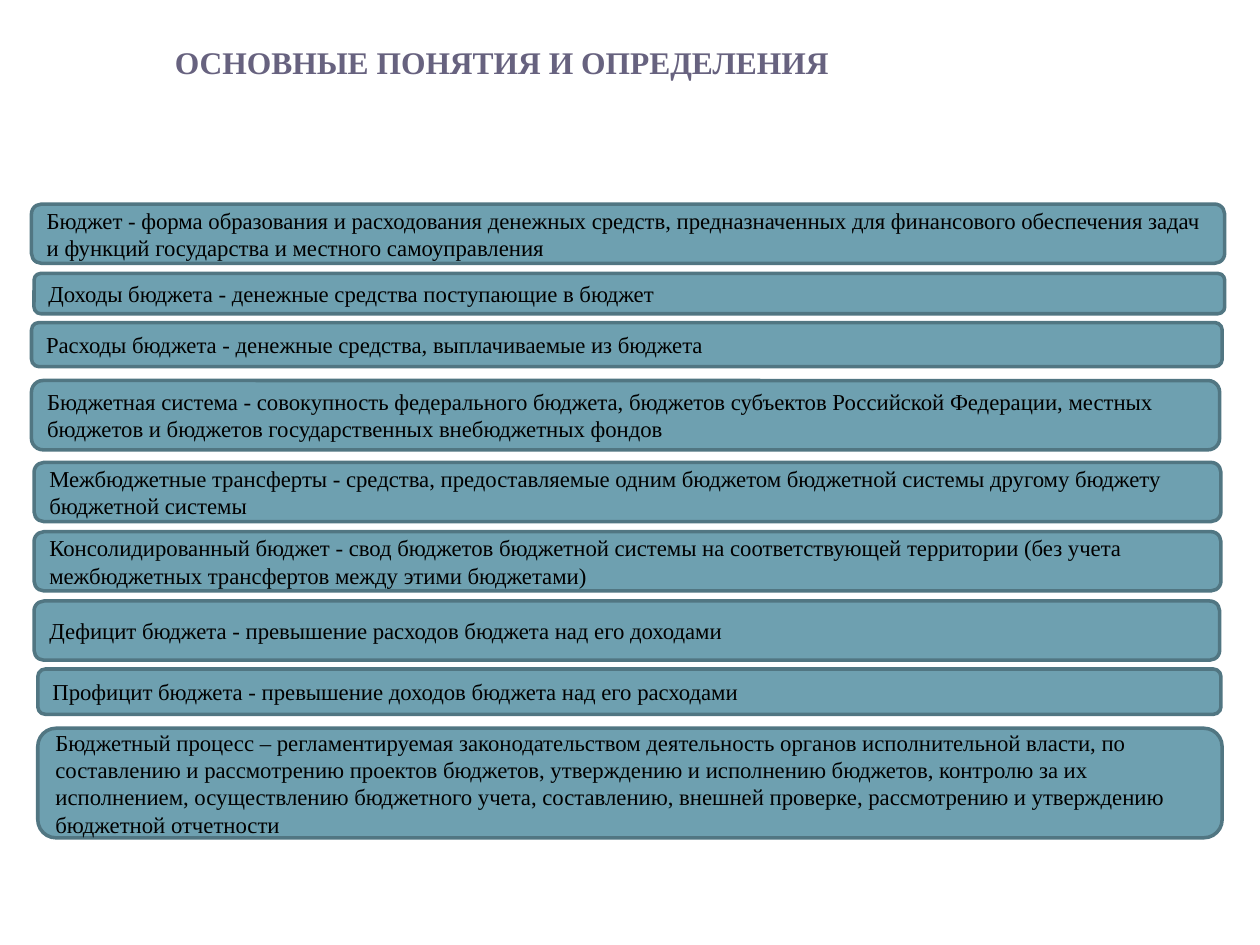
from pptx import Presentation
from pptx.dml.color import RGBColor
from pptx.enum.shapes import MSO_SHAPE as Shape
from pptx.enum.text import MSO_ANCHOR as Anchor, PP_ALIGN as Align
from pptx.util import Inches, Pt

FONT = "Times New Roman"
FILL = RGBColor(0x6E, 0xA0, 0xB0)
EDGE = RGBColor(0x51, 0x76, 0x82)
BLACK = RGBColor(0, 0, 0)
MAUVE = RGBColor(0x67, 0x62, 0x7F)

TITLE = "ОСНОВНЫЕ ПОНЯТИЯ И ОПРЕДЕЛЕНИЯ"

# Each term: left, top, width, height in inches, then the definition
TERMS = [
    (0.25, 1.62, 9.47, 0.47,
     "Бюджет - форма образования и расходования денежных средств, "
     "предназначенных для финансового обеспечения задач и функций "
     "государства и местного самоуправления"),
    (0.27, 2.17, 9.45, 0.32,
     "Доходы бюджета - денежные средства поступающие в бюджет"),
    (0.25, 2.56, 9.45, 0.35,
     "Расходы бюджета - денежные средства, выплачиваемые из бюджета"),
    (0.25, 3.02, 9.43, 0.55,
     "Бюджетная система - совокупность федерального бюджета, бюджетов "
     "субъектов Российской Федерации, местных бюджетов и бюджетов "
     "государственных внебюджетных фондов"),
    (0.27, 3.67, 9.42, 0.47,
     "Межбюджетные трансферты - средства, предоставляемые одним бюджетом "
     "бюджетной системы другому бюджету бюджетной системы"),
    (0.27, 4.22, 9.42, 0.47,
     "Консолидированный бюджет - свод бюджетов бюджетной системы на "
     "соответствующей территории (без учета межбюджетных трансфертов "
     "между этими бюджетами)"),
    (0.27, 4.77, 9.41, 0.47,
     "Дефицит бюджета - превышение расходов бюджета над его доходами"),
    (0.3, 5.31, 9.39, 0.36,
     "Профицит бюджета - превышение доходов бюджета над его расходами"),
    (0.3, 5.78, 9.4, 0.87,
     "Бюджетный процесс – регламентируемая законодательством деятельность "
     "органов исполнительной власти, по составлению и рассмотрению проектов "
     "бюджетов, утверждению и исполнению бюджетов, контролю за их "
     "исполнением, осуществлению бюджетного учета, составлению, внешней "
     "проверке, рассмотрению и утверждению бюджетной отчетности"),
]


def write(frame, text, size, color, align, bold=False):
    para = frame.paragraphs[0]
    para.alignment = align
    run = para.add_run()
    run.text = text
    font = run.font
    font.name, font.size, font.bold = FONT, Pt(size), bold
    font.color.rgb = color


def add_term(slide, left, top, width, height, text):
    box = slide.shapes.add_shape(
        Shape.ROUNDED_RECTANGLE, *map(Inches, (left, top, width, height)))
    box.shadow.inherit = False
    box.fill.solid()
    box.fill.fore_color.rgb = FILL
    box.line.color.rgb = EDGE
    box.line.width = Pt(2)
    frame = box.text_frame
    frame.word_wrap = True
    frame.vertical_anchor = Anchor.MIDDLE
    write(frame, text, 13, BLACK, Align.LEFT)


def main():
    deck = Presentation()
    deck.slide_width, deck.slide_height = Inches(10), Inches(7.5)
    slide = deck.slides.add_slide(deck.slide_layouts[5])

    # Heading
    head = slide.shapes.title
    head.left, head.top, head.width, head.height = map(
        Inches, (0.78, 0.34, 6.41, 0.68))
    frame = head.text_frame
    frame.margin_left = frame.margin_right = 0
    frame.margin_top = frame.margin_bottom = 0
    frame.vertical_anchor = Anchor.TOP
    write(frame, TITLE, 18, MAUVE, Align.CENTER, bold=True)

    # Definitions
    for term in TERMS:
        add_term(slide, *term)

    deck.save("out.pptx")


if __name__ == "__main__":
    main()
